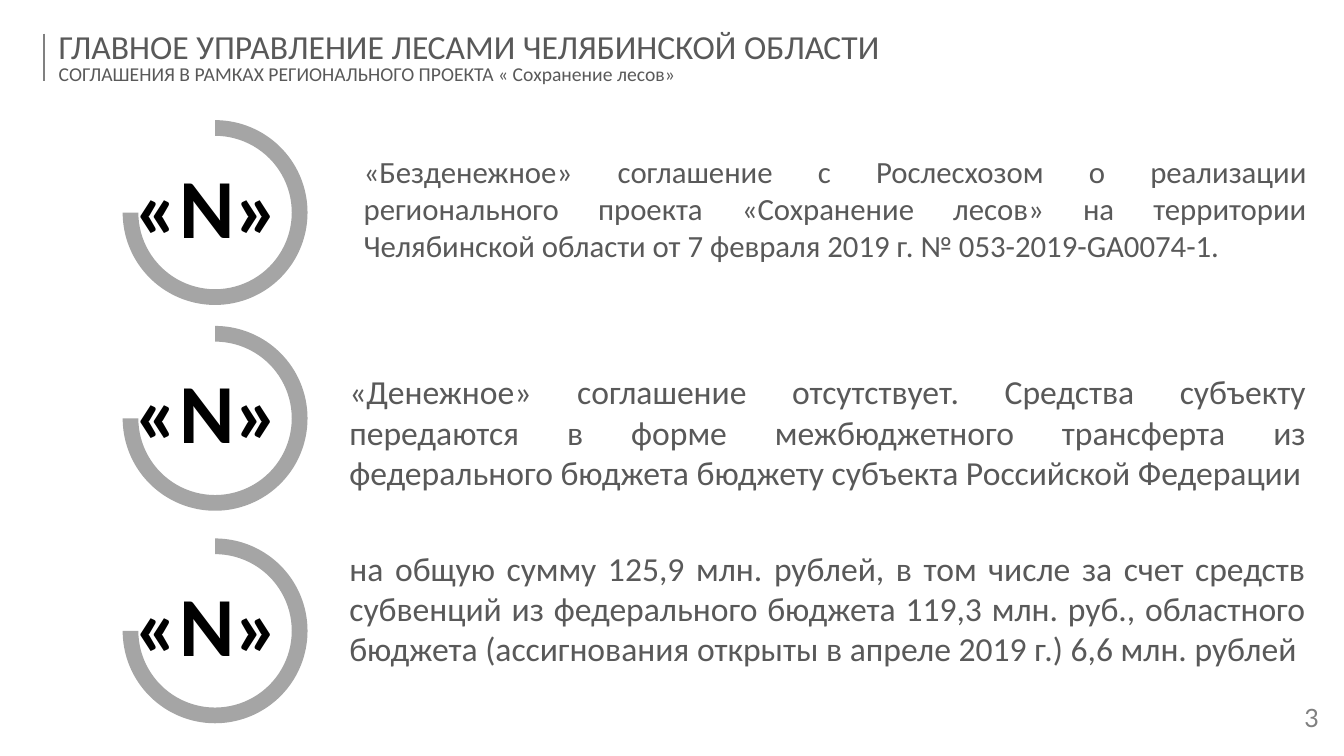
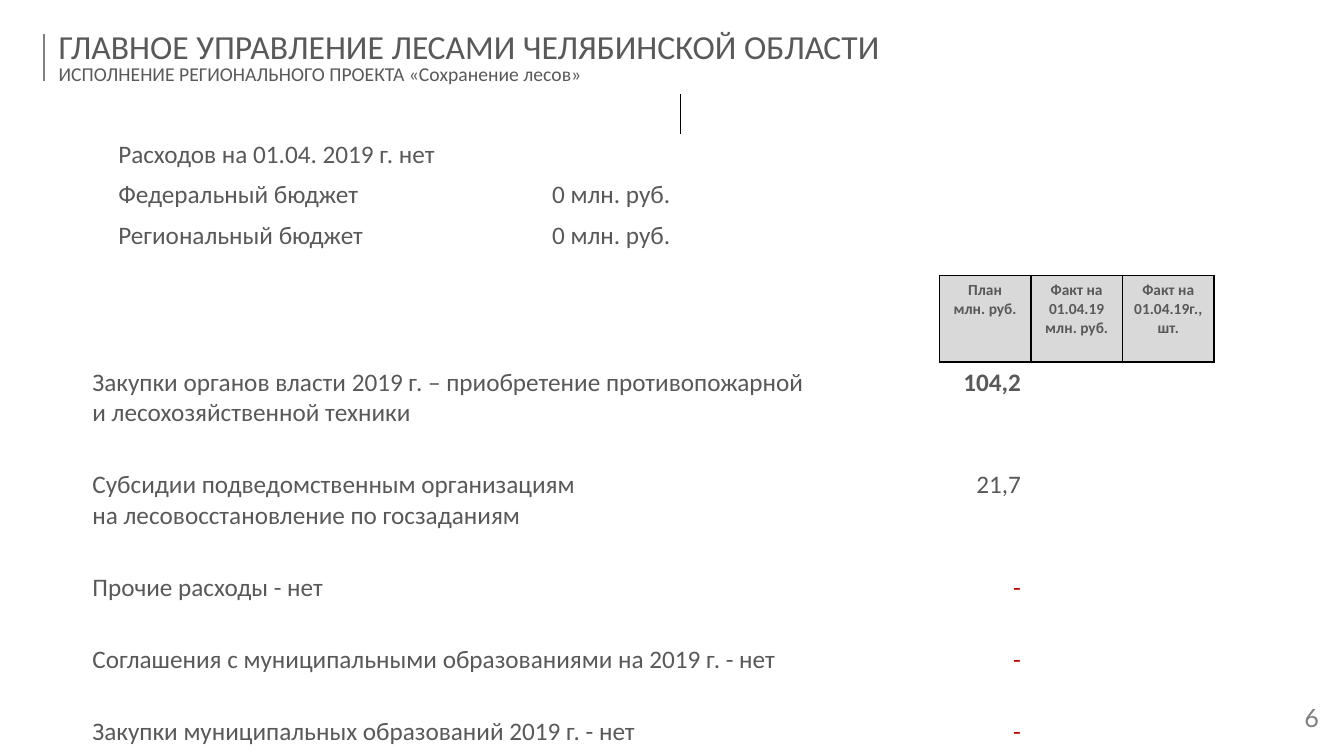
from dataclasses import dataclass

from lxml.etree import SubElement
from pptx import Presentation
from pptx.dml.color import RGBColor
from pptx.enum.shapes import MSO_CONNECTOR as Connector, MSO_SHAPE as Shape
from pptx.enum.text import MSO_ANCHOR as Anchor, PP_ALIGN as Align
from pptx.oxml.ns import qn
from pptx.util import Inches, Pt

ROWS = 9
CELL = Inches(7.5) / ROWS  # a grid of 16 columns by 9 rows
NO_STYLE = "{2D5ABB26-0587-4C30-8999-92F81FD0307C}"


@dataclass(frozen=True)
class Theme:
    body: str = "Calibri"
    number: str = "Lato"
    text: str = "595959"
    muted: str = "808080"
    ring: str = "A5A5A5"
    head: str = "D9D9D9"
    alert: str = "C00000"
    black: str = "000000"
    huge: int = 60
    title: int = 24
    large: int = 22
    medium: int = 18
    subtitle: int = 14
    small: int = 11


THEME = Theme()


def grid(*cells):
    """Turn grid columns or rows into whole EMU lengths."""
    return [round(cell * CELL) for cell in cells]


def write(frame, text, size, color=THEME.text, font=THEME.body, bold=False,
          **para_format):
    """Put each line of text in its own paragraph; size may be one per line."""
    lines = text.split("\n")
    sizes = size if isinstance(size, tuple) else (size,) * len(lines)
    for index, (line, line_size) in enumerate(zip(lines, sizes)):
        para = frame.add_paragraph() if index else frame.paragraphs[0]
        for name, value in para_format.items():
            setattr(para, name, value)
        span = para.add_run()
        span.text = line
        for name, value in {"size": Pt(line_size), "name": font, "bold": bold}.items():
            setattr(span.font, name, value)
        span.font.color.rgb = RGBColor.from_string(color)


def add_text(page, area, text, size, anchor=Anchor.TOP, **text_format):
    frame = page.shapes.add_textbox(*grid(*area)).text_frame
    frame.word_wrap = True
    frame.vertical_anchor = anchor
    write(frame, text, size, **text_format)


def add_rule(page, start, end):
    rule = page.shapes.add_connector(Connector.STRAIGHT, *grid(*start, *end))
    rule.line.color.rgb = RGBColor.from_string(THEME.muted)
    rule.line.width = Pt(1.5)
    SubElement(rule._element.spPr, qn("a:effectLst"))


def add_page(deck, subtitle, number):
    """Start a page with the shared title, side rule and page number."""
    page = deck.slides.add_slide(deck.slide_layouts[6])
    add_rule(page, (0.52, 0.4), (0.52, 0.96))
    add_text(page, (0.58, 0.31, 15.4, 0.8),
             f"ГЛАВНОЕ УПРАВЛЕНИЕ ЛЕСАМИ ЧЕЛЯБИНСКОЙ ОБЛАСТИ\n{subtitle}",
             (THEME.title, THEME.subtitle), Anchor.MIDDLE, line_spacing=0.8)
    add_text(page, (15.22, 8.28, 0.78, 0.6), str(number), THEME.medium,
             Anchor.MIDDLE, color=THEME.muted, font=THEME.number,
             alignment=Align.CENTER, line_spacing=0.8)
    return page


def add_ring(page, top, label):
    """Draw a three-quarter ring with a large label inside."""
    ring = page.shapes.add_shape(Shape.BLOCK_ARC, *grid(1.46, top, 2.2, 2.2))
    degree = 0.6
    for index, value in enumerate((270 * degree, 180 * degree, 0.085)):
        ring.adjustments[index] = value
    ring.shadow.inherit = False
    ring.fill.solid()
    ring.fill.fore_color.rgb = RGBColor.from_string(THEME.ring)
    ring.line.fill.background()
    add_text(page, (0.99, top + 0.34, 2.95, 1.33), label, THEME.huge,
             Anchor.MIDDLE, color=THEME.black, bold=True, alignment=Align.CENTER)


def add_grid_table(page, left, top, widths, heights):
    """Add an unstyled table with clear cells."""
    area = grid(left, top, sum(widths), sum(heights))
    table = page.shapes.add_table(len(heights), len(widths), *area).table
    table.first_row = table.horz_banding = False
    table._tbl.tblPr.find(qn("a:tableStyleId")).text = NO_STYLE
    for column, width in zip(table.columns, grid(*widths)):
        column.width = width
    for row, height in zip(table.rows, grid(*heights)):
        row.height = height
    for cell in table.iter_cells():
        cell.fill.background()
    return table


def set_borders(cell, sides):
    """Draw black lines on the sides named by the letters L, R, T and B."""
    properties = cell._tc.get_or_add_tcPr()
    for index, side in enumerate(sides):
        line = properties.makeelement(qn(f"a:ln{side}"), {"w": str(Pt(1))})
        fill = SubElement(line, qn("a:solidFill"))
        SubElement(fill, qn("a:srgbClr"), val=THEME.black)
        properties.insert(index, line)


def build_agreements(deck):
    page = add_page(
        deck, "СОГЛАШЕНИЯ В РАМКАХ РЕГИОНАЛЬНОГО ПРОЕКТА « Сохранение лесов»", 3)
    agreements = [
        (1.43, (4.21, 1.76, 11.46, 1.9), THEME.large,
         "«Безденежное» соглашение с Рослесхозом о реализации регионального "
         "проекта «Сохранение лесов» на территории Челябинской области "
         "от 7 февраля 2019 г. № 053-2019-GА0074-1."),
        (3.88, (4.04, 4.36, 11.62, 1.57), THEME.title,
         "«Денежное» соглашение отсутствует. Средства субъекту передаются "
         "в форме межбюджетного трансферта из федерального бюджета бюджету "
         "субъекта Российской Федерации"),
        (6.41, (4.04, 6.46, 11.62, 1.57), THEME.title,
         "на общую сумму 125,9 млн. рублей, в том числе за счет средств "
         "субвенций из федерального бюджета 119,3 млн. руб., областного "
         "бюджета (ассигнования открыты в апреле 2019 г.) 6,6 млн. рублей"),
    ]
    for ring_top, area, size, text in agreements:
        add_ring(page, ring_top, "«N»")
        add_text(page, area, text, size, alignment=Align.JUSTIFY)


def add_purchases(page):
    table = add_grid_table(page, 0.58, 3.28, [0.4, 10.2] + [1.09] * 3,
                           [1.03] + [1.22] * 2 + [0.86] * 3)
    headings = ["План\nмлн. руб.", "Факт на 01.04.19\nмлн. руб.",
                "Факт на 01.04.19г.,\nшт."]
    for column, heading in enumerate(headings, 2):
        cell = table.cell(0, column)
        set_borders(cell, "LRTB")
        cell.fill.solid()
        cell.fill.fore_color.rgb = RGBColor.from_string(THEME.head)
        write(cell.text_frame, heading, THEME.small, bold=True,
              alignment=Align.CENTER)
    purchases = [
        ("Закупки органов власти 2019 г. – приобретение противопожарной\n"
         "и лесохозяйственной техники", "104,2", {"bold": True}),
        ("Субсидии подведомственным организациям\n"
         "на лесовосстановление по госзаданиям", "21,7", {}),
        ("Прочие расходы - нет", "-", {"color": THEME.alert}),
        ("Соглашения с муниципальными образованиями на 2019 г. - нет", "-",
         {"color": THEME.alert}),
        ("Закупки муниципальных образований 2019 г. - нет", "-",
         {"color": THEME.alert}),
    ]
    for row, (name, plan, plan_format) in enumerate(purchases, 1):
        write(table.cell(row, 1).text_frame, name, THEME.medium)
        write(table.cell(row, 2).text_frame, plan, THEME.medium,
              alignment=Align.RIGHT, **plan_format)


def add_budgets(page):
    table = add_grid_table(page, 1, 1.12, [0.28, 4.1, 2.71], [0.48] * 3 + [0.68])
    set_borders(table.cell(0, 2), "R")
    budgets = [("Расходов на 01.04. 2019 г. нет", ""),
               ("Федеральный бюджет", "0 млн. руб."),
               ("Региональный бюджет", "0 млн. руб.")]
    for row, (name, amount) in enumerate(budgets, 1):
        write(table.cell(row, 1).text_frame, name, THEME.medium)
        if amount:
            write(table.cell(row, 2).text_frame, amount, THEME.medium,
                  alignment=Align.RIGHT)


def build_spending(deck):
    page = add_page(deck, "ИСПОЛНЕНИЕ РЕГИОНАЛЬНОГО ПРОЕКТА «Сохранение лесов»", 6)
    add_purchases(page)
    add_budgets(page)


def main():
    deck = Presentation()
    deck.slide_width, deck.slide_height = Inches(13.33), Inches(7.5)
    build_agreements(deck)
    build_spending(deck)
    deck.save("out.pptx")


if __name__ == "__main__":
    main()
